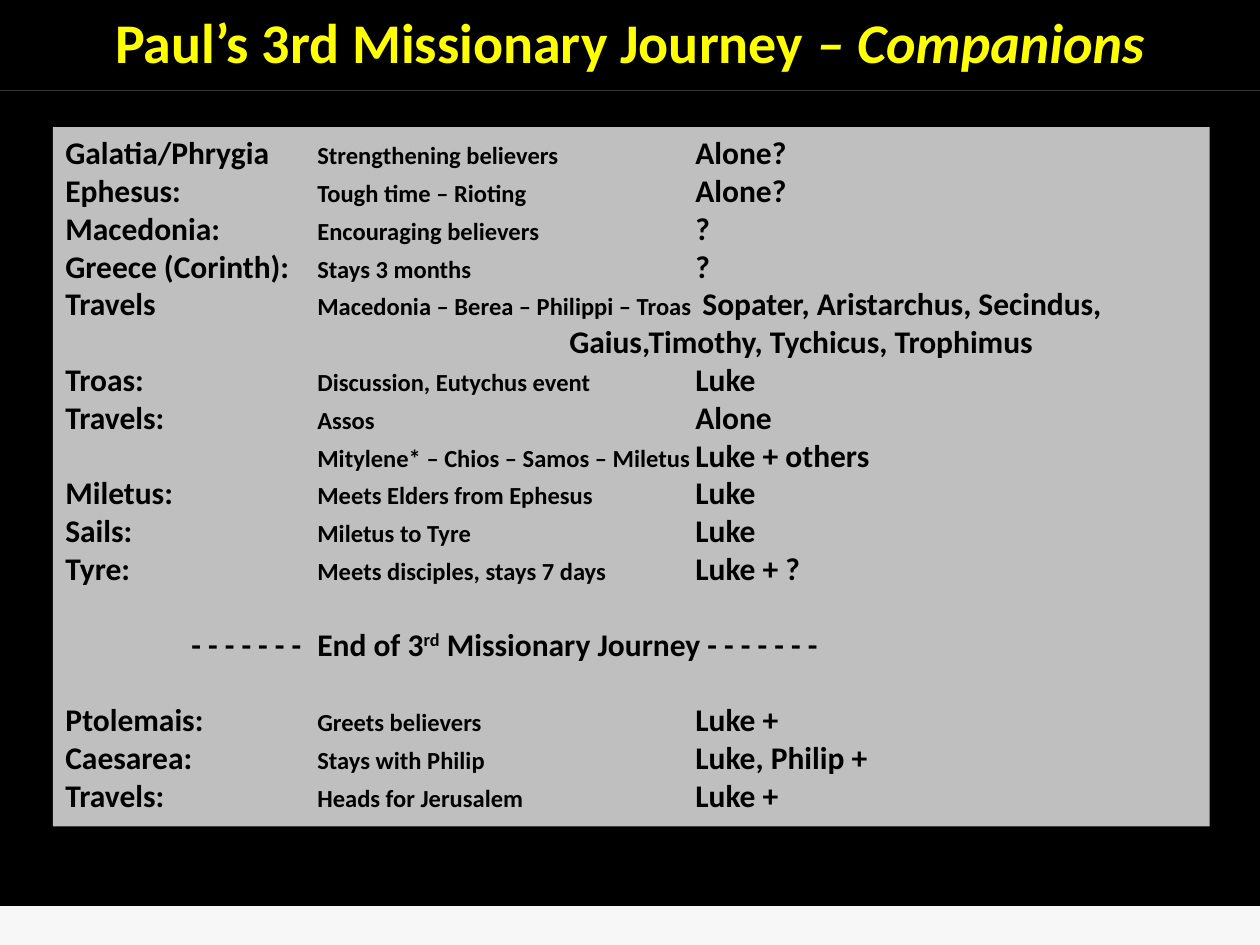
from lxml.etree import SubElement
from pptx import Presentation
from pptx.dml.color import RGBColor
from pptx.enum.shapes import MSO_SHAPE
from pptx.enum.text import MSO_ANCHOR, PP_ALIGN
from pptx.oxml.ns import qn
from pptx.util import Pt

BLACK, YELLOW, GREY, PALE = "000000", "FFFF00", "BFBFBF", "F7F7F7"
EDGE, PLACE, NAMES = 51.84, 144, 360
LINE = 21.6

STOPS = [
    ("Galatia/Phrygia", "Strengthening believers", "Alone?"),
    ("Ephesus:", "Tough time – Rioting", "Alone?"),
    ("Macedonia:", "Encouraging believers", "?"),
    ("Greece (Corinth):", "Stays 3 months", "?"),
    ("Travels", "Macedonia – Berea – Philippi – Troas",
     " Sopater, Aristarchus, Secindus,"),
]
SAILING = [
    ("Troas:", "Discussion, Eutychus event", "Luke"),
    ("Travels:", "Assos", "Alone"),
    ("", "Mitylene* – Chios – Samos – Miletus", "Luke + others"),
    ("Miletus:", "Meets Elders from Ephesus", "Luke"),
    ("Sails:", "Miletus to Tyre", "Luke"),
    ("Tyre:", "Meets disciples, stays 7 days", "Luke + ?"),
]
AFTER = [
    ("Ptolemais:", "Greets believers", "Luke +"),
    ("Caesarea:", "Stays with Philip", "Luke, Philip +"),
    ("Travels:", "Heads for Jerusalem", "Luke +"),
]


def color(code):
    return RGBColor.from_string(code)


def write(para, text, size=18, fill=BLACK, italic=None, raised=False):
    run = para.add_run()
    run.text = text
    font = run.font
    font.name, font.size, font.bold, font.italic = "Calibri", Pt(size), True, italic
    font.color.rgb = color(fill)
    if raised:
        run._r.get_or_add_rPr().set("baseline", "30000")


class Deck:
    """Holds the style and the current slide."""

    def __init__(self):
        self.show = Presentation()
        self.show.slide_width, self.show.slide_height = Pt(720), Pt(540)
        self.slide = self.show.slides.add_slide(self.show.slide_layouts[6])
        back = self.slide.background.fill
        back.solid()
        back.fore_color.rgb = color(PALE)

    def panel(self, left, top, width, height, fill, anchor=MSO_ANCHOR.TOP):
        shape = self.slide.shapes.add_shape(
            MSO_SHAPE.RECTANGLE, Pt(left), Pt(top), Pt(width), Pt(height))
        shape.shadow.inherit = False
        shape.fill.solid()
        shape.fill.fore_color.rgb = color(fill)
        shape.line.fill.background()
        frame = shape.text_frame
        frame.word_wrap = True
        frame.vertical_anchor = anchor
        frame.paragraphs[0].alignment = PP_ALIGN.LEFT
        return frame

    def row(self, frame, tabs, gap=0):
        para = frame.paragraphs[0]
        if para.runs:
            para = frame.add_paragraph()
        para.alignment = PP_ALIGN.LEFT
        if gap:
            para.space_before = Pt(gap)
        stops = SubElement(para._p.get_or_add_pPr(), qn("a:tabLst"))
        for tab in tabs:
            SubElement(stops, qn("a:tab"), pos=str(Pt(tab)), algn="l")
        return para

    def list(self, frame, rows, gap=0):
        for place, event, names in rows:
            para = self.row(frame, (PLACE, NAMES), gap)
            write(para, place + "\t")
            write(para, event, size=14)
            write(para, "\t" + names)
            gap = 0

    def save(self):
        self.show.save("out.pptx")


def main():
    deck = Deck()
    title = deck.panel(0, 0, 720, EDGE, BLACK, MSO_ANCHOR.MIDDLE).paragraphs[0]
    title.alignment = PP_ALIGN.CENTER
    title.line_spacing = 0.9
    write(title, "Paul’s 3rd Missionary Journey ", size=32, fill=YELLOW)
    write(title, "– Companions", size=32, fill=YELLOW, italic=True)

    deck.panel(0, EDGE, 720, 465.84, BLACK)
    frame = deck.panel(30.24, 72.6, 661, 399.6, GREY)
    deck.list(frame, STOPS)
    write(deck.row(frame, (288,)), "\tGaius,Timothy, Tychicus, Trophimus")
    deck.list(frame, SAILING)
    end = deck.row(frame, (72, PLACE), LINE)
    write(end, "\t- - - - - - -\tEnd of 3")
    write(end, "rd", raised=True)
    write(end, " Missionary Journey - - - - - - -")
    deck.list(frame, AFTER, LINE)
    deck.save()


if __name__ == "__main__":
    main()
